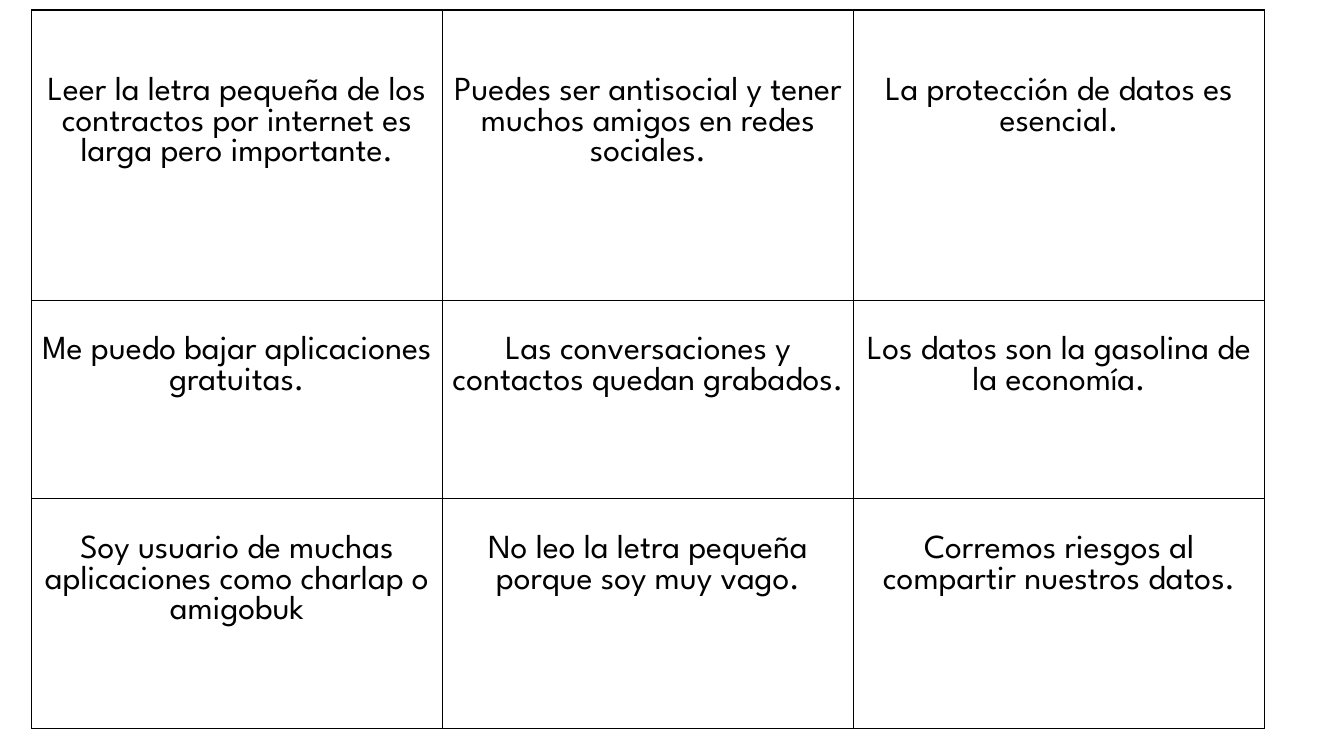
"""Build a slide with a three by three table of statements about data privacy."""
import pptx
import pptx.dml.color
import pptx.enum.text
import pptx.oxml.ns
import pptx.util
from lxml import etree

Cm = pptx.util.Cm
Pt = pptx.util.Pt
qn = pptx.oxml.ns.qn

COLORS = {"text": "000000", "border": "000000", "cell": "FFFFFF"}
COLUMN_WIDTH = 10.36
ROW_HEIGHTS = [7.32, 5, 5.79]
TOP_MARGINS = [1.68, 0.9, 0.9]
STATEMENTS = [
    [
        "Leer la letra pequeña de los contractos por internet es larga pero importante.",
        "Puedes ser antisocial y tener muchos amigos en redes sociales.",
        "La protección de datos es esencial.",
    ],
    [
        "Me puedo bajar aplicaciones gratuitas.",
        "Las conversaciones y contactos quedan grabados.",
        "Los datos son la gasolina de la economía.",
    ],
    [
        "Soy usuario de muchas aplicaciones como charlap o amigobuk",
        "No leo la letra pequeña porque soy muy vago.",
        "Corremos riesgos al compartir nuestros datos.",
    ],
]
FONT_FORMAT = {
    "name": "League Spartan",
    "size": Pt(24),
    "bold": False,
}


def add_borders(cell):
    properties = cell._tc.get_or_add_tcPr()
    for side in ("lnL", "lnR", "lnT", "lnB"):
        line = etree.SubElement(properties, qn(f"a:{side}"), w=str(Pt(1)))
        fill = etree.SubElement(line, qn("a:solidFill"))
        etree.SubElement(fill, qn("a:srgbClr"), val=COLORS["border"])


presentation = pptx.Presentation()
presentation.slide_width = Cm(33.87)
presentation.slide_height = Cm(19.05)
slide = presentation.slides.add_slide(presentation.slide_layouts[6])

table = slide.shapes.add_table(
    3, 3, Cm(0.79), Cm(0.25), Cm(3 * COLUMN_WIDTH), Cm(sum(ROW_HEIGHTS))
).table
table.first_row = False
table.horz_banding = False
for column in table.columns:
    column.width = Cm(COLUMN_WIDTH)

for row_index, statements in enumerate(STATEMENTS):
    table.rows[row_index].height = Cm(ROW_HEIGHTS[row_index])
    cell_format = {
        "margin_left": Cm(0.19),
        "margin_right": Cm(0.19),
        "margin_top": Cm(TOP_MARGINS[row_index]),
        "margin_bottom": Cm(0.13),
        "vertical_anchor": pptx.enum.text.MSO_ANCHOR.TOP,
    }
    for column_index, statement in enumerate(statements):
        cell = table.cell(row_index, column_index)
        for name, value in cell_format.items():
            setattr(cell, name, value)
        add_borders(cell)
        cell.fill.solid()
        cell.fill.fore_color.rgb = pptx.dml.color.RGBColor.from_string(COLORS["cell"])
        paragraph = cell.text_frame.paragraphs[0]
        paragraph.alignment = pptx.enum.text.PP_ALIGN.CENTER
        run = paragraph.add_run()
        run.text = statement
        for name, value in FONT_FORMAT.items():
            setattr(run.font, name, value)
        run.font.color.rgb = pptx.dml.color.RGBColor.from_string(COLORS["text"])

presentation.save("out.pptx")
